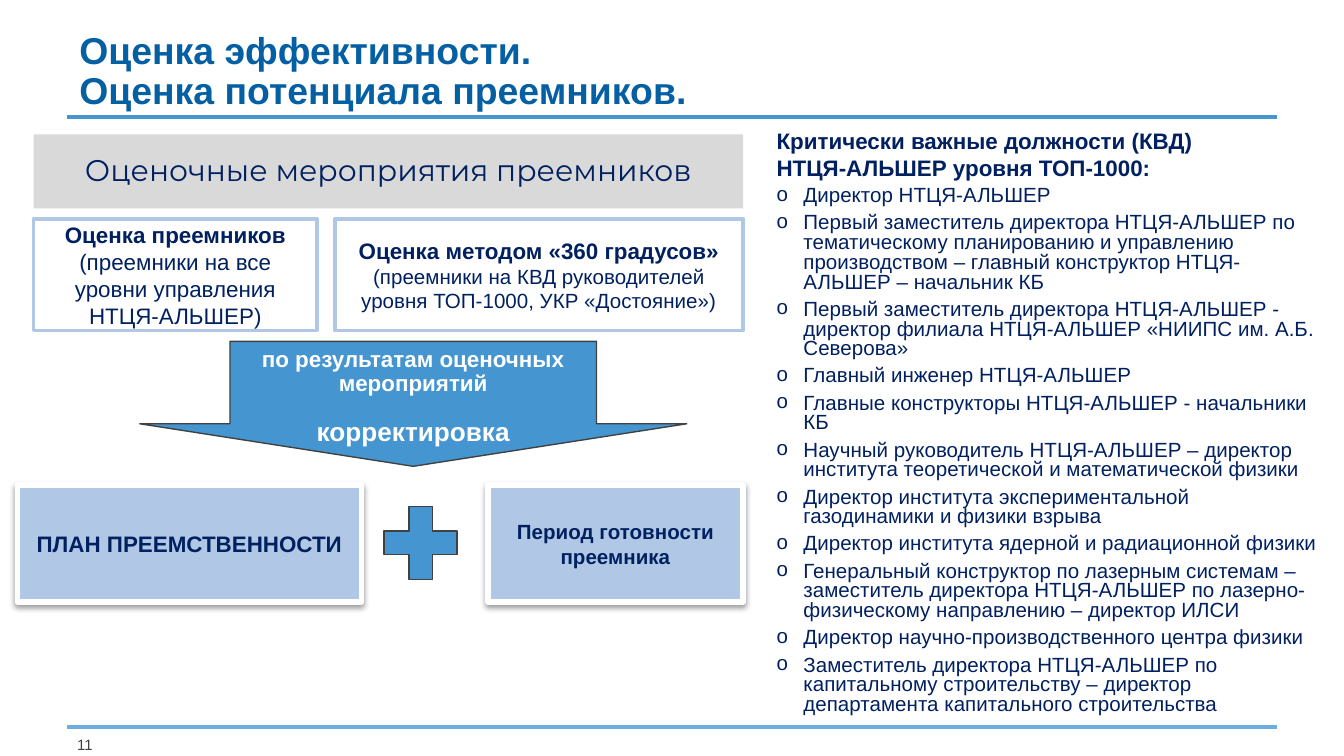
from lxml import etree
from pptx import Presentation
from pptx.dml.color import RGBColor
from pptx.enum.shapes import MSO_CONNECTOR, MSO_SHAPE
from pptx.enum.text import MSO_ANCHOR, PP_ALIGN
from pptx.oxml.ns import qn
from pptx.util import Inches, Pt

RECTANGLE, DOWN_ARROW, PLUS = MSO_SHAPE.RECTANGLE, MSO_SHAPE.DOWN_ARROW, MSO_SHAPE.MATH_PLUS
STRAIGHT = MSO_CONNECTOR.STRAIGHT
TOP, MIDDLE, BOTTOM = MSO_ANCHOR.TOP, MSO_ANCHOR.MIDDLE, MSO_ANCHOR.BOTTOM
LEFT, CENTER, RIGHT = PP_ALIGN.LEFT, PP_ALIGN.CENTER, PP_ALIGN.RIGHT

WHITE = RGBColor(0xFF, 0xFF, 0xFF)
NAVY = RGBColor(0x00, 0x20, 0x60)
TITLE_BLUE = RGBColor(0x04, 0x5F, 0xA3)
BLUE = RGBColor(0x45, 0x95, 0xD1)
FOOTER_BLUE = RGBColor(0x6C, 0xAE, 0xDF)
PALE_BLUE = RGBColor(0xB0, 0xC8, 0xE5)
GRAY = RGBColor(0xD9, 0xD9, 0xD9)
DARK_GRAY = RGBColor(0x41, 0x41, 0x42)

ASSESSMENTS = [
    (0.25, 2.11, 12, "Оценка преемников",
     "(преемники на все уровни управления НТЦЯ-АЛЬШЕР)"),
    (2.49, 3.04, 11, "Оценка методом «360 градусов»",
     "(преемники на КВД руководителей уровня ТОП-1000, УКР «Достояние»)"),
]
RESULTS = [
    (0.13, 2.56, 12, "ПЛАН ПРЕЕМСТВЕННОСТИ"),
    (3.63, 1.9, 11, "Период готовности преемника"),
]
POSITIONS_HEADING = "Критически важные должности (КВД) \vНТЦЯ-АЛЬШЕР уровня ТОП-1000:"
POSITIONS = [
    "Директор НТЦЯ-АЛЬШЕР",
    "Первый заместитель директора НТЦЯ-АЛЬШЕР по тематическому планированию и управлению "
    "производством – главный конструктор НТЦЯ-АЛЬШЕР – начальник КБ",
    "Первый заместитель директора НТЦЯ-АЛЬШЕР - директор филиала НТЦЯ-АЛЬШЕР "
    "«НИИПС им. А.Б. Северова»",
    "Главный инженер НТЦЯ-АЛЬШЕР",
    "Главные конструкторы НТЦЯ-АЛЬШЕР - начальники КБ",
    "Научный руководитель НТЦЯ-АЛЬШЕР – директор института теоретической и "
    "математической физики",
    "Директор института экспериментальной газодинамики и физики взрыва",
    "Директор института ядерной и радиационной физики",
    "Генеральный конструктор по лазерным системам – заместитель директора НТЦЯ-АЛЬШЕР "
    "по лазерно-физическому направлению – директор ИЛСИ",
    "Директор научно-производственного центра физики",
    "Заместитель директора НТЦЯ-АЛЬШЕР по капитальному строительству – директор "
    "департамента капитального строительства",
]


def format_paragraph(paragraph, size, color, bold=False, font="Arial",
                     align=CENTER, spacing=None):
    paragraph.alignment = align
    if spacing:
        paragraph.line_spacing = spacing
    for run in paragraph.runs:
        run.font.name = font
        run.font.size = Pt(size)
        run.font.bold = bold
        run.font.color.rgb = color


def set_margins(frame, horizontal, vertical):
    frame.margin_left = frame.margin_right = Inches(horizontal)
    frame.margin_top = frame.margin_bottom = Inches(vertical)


def add_text(slide, left, top, width, height, text, size, color, anchor=TOP,
             wrap=True, margins=(0.1, 0.05), **style):
    box = slide.shapes.add_textbox(Inches(left), Inches(top), Inches(width), Inches(height))
    frame = box.text_frame
    frame.word_wrap = wrap
    frame.vertical_anchor = anchor
    set_margins(frame, *margins)
    frame.text = text
    format_paragraph(frame.paragraphs[0], size, color, **style)
    return frame


def add_filled_shape(slide, kind, left, top, width, height, fill, line=None, line_width=0.75):
    shape = slide.shapes.add_shape(kind, Inches(left), Inches(top), Inches(width), Inches(height))
    shape.shadow.inherit = False
    shape.fill.solid()
    shape.fill.fore_color.rgb = fill
    if line is None:
        shape.line.fill.background()
    else:
        shape.line.color.rgb = line
        shape.line.width = Pt(line_width)
    shape.text_frame.word_wrap = True
    shape.text_frame.vertical_anchor = MIDDLE
    set_margins(shape.text_frame, 0.09, 0.04)
    return shape


def add_rule(slide, top, color):
    rule = slide.shapes.add_connector(STRAIGHT, Inches(0.5), Inches(top), Inches(9.5), Inches(top))
    rule.line.color.rgb = color
    rule.line.width = Pt(2.25)
    etree.SubElement(rule._element.spPr, qn("a:effectLst"))


def add_drop_shadow(shape):
    effects = shape._element.spPr.find(qn("a:effectLst"))
    shadow = etree.SubElement(effects, qn("a:outerShdw"), blurRad=str(Pt(3.1)),
                              dist=str(Pt(1.6)), dir="5400000", rotWithShape="0")
    color = etree.SubElement(shadow, qn("a:srgbClr"), val="000000")
    etree.SubElement(color, qn("a:alpha"), val="38000")


def add_bullet(paragraph):
    properties = paragraph._p.get_or_add_pPr()
    properties.set("marL", str(Inches(0.2)))
    properties.set("indent", str(Inches(-0.2)))
    etree.SubElement(properties, qn("a:buFont"), typeface="Arial")
    etree.SubElement(properties, qn("a:buChar"), char="o")


def add_assessment(slide, left, width, detail_size, heading, detail):
    box = add_filled_shape(slide, RECTANGLE, left, 1.63, width, 0.83, WHITE, PALE_BLUE, 2)
    frame = box.text_frame
    frame.text = heading
    format_paragraph(frame.paragraphs[0], 12, NAVY, bold=True)
    paragraph = frame.add_paragraph()
    paragraph.text = detail
    format_paragraph(paragraph, detail_size, NAVY)


def add_result(slide, left, width, size, text):
    box = add_filled_shape(slide, RECTANGLE, left, 3.61, width, 0.87, PALE_BLUE, WHITE, 3)
    add_drop_shadow(box)
    box.text_frame.text = text
    format_paragraph(box.text_frame.paragraphs[0], size, NAVY, bold=True)


def add_positions(slide):
    frame = add_text(slide, 5.68, 0.9, 4.27, 4.52, POSITIONS_HEADING, 12, NAVY,
                     bold=True, align=LEFT)
    frame.paragraphs[0].space_after = Pt(3)
    for position in POSITIONS:
        paragraph = frame.add_paragraph()
        paragraph.text = position
        add_bullet(paragraph)
        paragraph.space_after = Pt(4)
        format_paragraph(paragraph, 11, NAVY, align=LEFT, spacing=0.8)


def add_correction_arrow(slide):
    arrow = add_filled_shape(slide, DOWN_ARROW, 1.04, 2.54, 4.07, 0.93, BLUE, DARK_GRAY)
    arrow.adjustments[0] = 0.67
    arrow.adjustments[1] = 0.34
    add_text(slide, 2.25, 3.04, 1.65, 0.43, "корректировка", 14, WHITE, wrap=False, bold=True)
    add_text(slide, 1.71, 2.54, 2.73, 0.6, "по результатам оценочных мероприятий", 12, WHITE,
             bold=True, spacing=0.9)


def main():
    presentation = Presentation()
    presentation.slide_width = Inches(10)
    presentation.slide_height = presentation.slide_width * 9 // 16
    slide = presentation.slides.add_slide(presentation.slide_layouts[6])

    add_rule(slide, 5.41, FOOTER_BLUE)
    add_rule(slide, 0.87, BLUE)
    add_text(slide, 0.5, 5.47, 0.19, 0.11, "11", 8, DARK_GRAY, wrap=False, margins=(0, 0),
             align=RIGHT)
    add_text(slide, 0.5, 0.23, 7.55, 0.65, "Оценка эффективности.\vОценка потенциала преемников.",
             20, TITLE_BLUE, anchor=BOTTOM, margins=(0.09, 0.04), bold=True, align=LEFT,
             spacing=0.9)

    banner = add_filled_shape(slide, RECTANGLE, 0.25, 1, 5.28, 0.55, GRAY)
    banner.text_frame.text = "Оценочные мероприятия преемников"
    format_paragraph(banner.text_frame.paragraphs[0], 16, NAVY, font="Montserrat", spacing=0.9)

    for assessment in ASSESSMENTS:
        add_assessment(slide, *assessment)
    add_correction_arrow(slide)
    for result in RESULTS:
        add_result(slide, *result)
    add_filled_shape(slide, PLUS, 2.76, 3.67, 0.74, 0.74, BLUE, DARK_GRAY)
    add_positions(slide)

    presentation.save("out.pptx")


if __name__ == "__main__":
    main()
